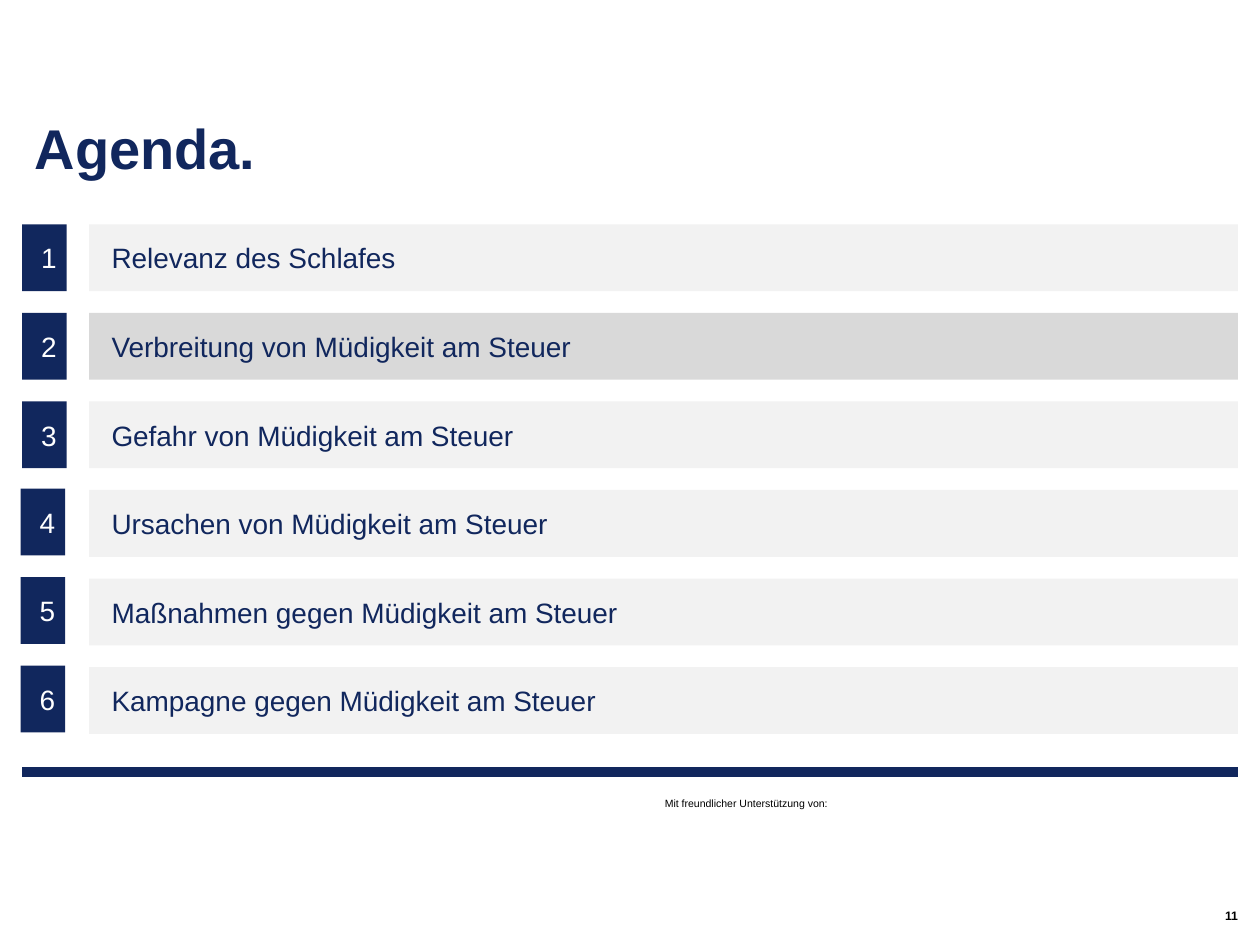
"""Build the agenda slide with six numbered topics."""
import pptx
import pptx.util
import pptx.dml.color
import pptx.enum.shapes
import pptx.enum.text
import pptx.oxml.ns
import lxml.etree

Pt = pptx.util.Pt
Anchor = pptx.enum.text.MSO_ANCHOR
Align = pptx.enum.text.PP_ALIGN
hues = {"navy": "11275D", "white": "FFFFFF", "black": "000000",
        "pale": "F2F2F2", "grey": "D9D9D9"}
topics = ["Relevanz des Schlafes", "Verbreitung von Müdigkeit am Steuer",
          "Gefahr von Müdigkeit am Steuer", "Ursachen von Müdigkeit am Steuer",
          "Maßnahmen gegen Müdigkeit am Steuer", "Kampagne gegen Müdigkeit am Steuer"]
active = 2


def color(name):
    return pptx.dml.color.RGBColor.from_string(hues[name])


def write(shape, text, size, hue, anchor, align, side, edge, bold=False):
    frame = shape.text_frame
    frame.word_wrap = True
    frame.vertical_anchor = anchor
    frame.margin_left = frame.margin_right = Pt(side)
    frame.margin_top = frame.margin_bottom = Pt(edge)
    para = frame.paragraphs[0]
    para.text = text
    para.alignment = align
    para.font.name = "Arial"
    para.font.size = Pt(size)
    para.font.bold = bold
    para.font.color.rgb = color(hue)
    return para


deck = pptx.Presentation()
deck.slide_width, deck.slide_height = Pt(720), Pt(540)
shapes = deck.slides.add_slide(deck.slide_layouts[6]).shapes

rule = shapes.add_connector(pptx.enum.shapes.MSO_CONNECTOR.STRAIGHT,
                            Pt(12.75), Pt(441.2), Pt(707.25), Pt(441.2))
rule.line.color.rgb = color("navy")
rule.line.width = Pt(5.67)
lxml.etree.SubElement(rule._element.spPr, pptx.oxml.ns.qn("a:effectLst"))

credit = shapes.add_textbox(Pt(372.8), Pt(452), Pt(146), Pt(14.4))
write(credit, "Mit freundlicher Unterstützung von:", 6, "black",
      Anchor.TOP, Align.LEFT, 7.2, 3.6)

title = shapes.add_textbox(Pt(12.75), Pt(28), Pt(694.5), Pt(75.6))
para = write(title, "Agenda.", 32, "navy", Anchor.BOTTOM, Align.LEFT, 7.2, 0, True)
para.line_spacing = 0.9

page = shapes.add_textbox(Pt(464.4), Pt(517.7), Pt(243), Pt(11.5))
write(page, "11", 7, "black", Anchor.MIDDLE, Align.RIGHT, 0, 0, True)

for num, topic in enumerate(topics, 1):
    top = 128.2 + 50.6 * (num - 1)
    shift = 0.8 if num > 3 else 0
    shade = "grey" if num == active else "pale"
    cells = [
        (12.6 - shift, top - shift, 25.5, "navy", str(num), "white", Align.RIGHT, 5.7),
        (51, top, 656.4, shade, topic, "navy", Align.LEFT, 12.75),
    ]
    for left, y, width, fill, text, hue, align, side in cells:
        box = shapes.add_shape(pptx.enum.shapes.MSO_SHAPE.RECTANGLE,
                               Pt(left), Pt(y), Pt(width), Pt(38.2))
        box.shadow.inherit = False
        box.fill.solid()
        box.fill.fore_color.rgb = color(fill)
        box.line.fill.background()
        para = write(box, text, 16, hue, Anchor.MIDDLE, align, side, 3.6)
        para.space_after = Pt(8)

deck.save("out.pptx")
